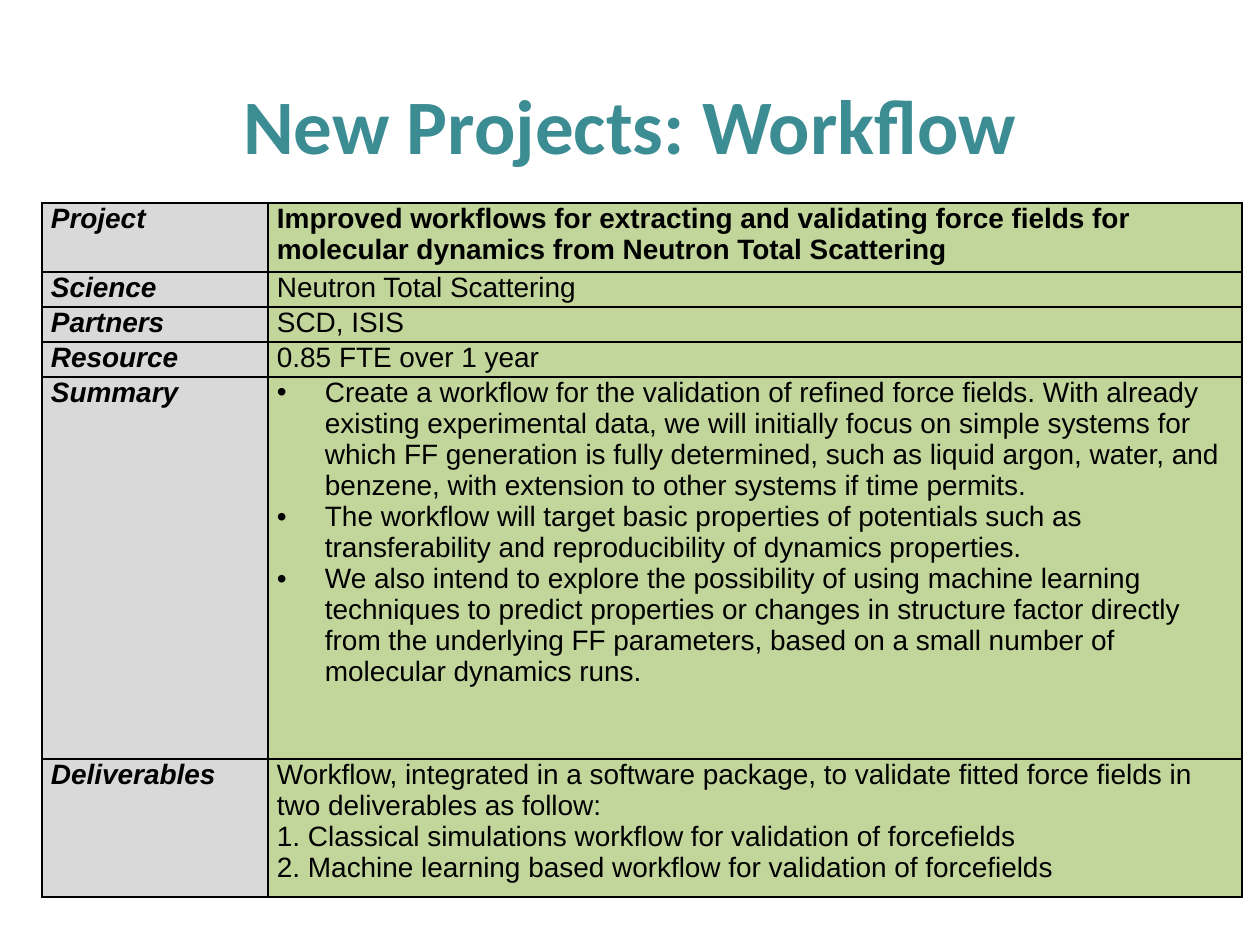
from dataclasses import dataclass

from lxml import etree
from pptx import Presentation
from pptx import util as u
from pptx.dml.color import RGBColor
from pptx.enum import text
from pptx.oxml import ns

PX_PER_INCH = 126
TEAL = RGBColor(0x3C, 0x8C, 0x93)
GREY = RGBColor(0xD9, 0xD9, 0xD9)
GREEN = RGBColor(0xC2, 0xD6, 0x9B)
BLACK = RGBColor(0, 0, 0)
CELL_MARGIN = 9
BULLET_INDENT = 48
COLUMN_WIDTHS = (226, 974)


@dataclass(frozen=True)
class Entry:
    label: str
    height: int
    lines: tuple[str, ...]
    bold: bool = False
    bulleted: bool = False


ENTRIES = (
    Entry("Project", 69, (
        "Improved workflows for extracting and validating force fields for "
        "molecular dynamics from Neutron Total Scattering",
    ), bold=True),
    Entry("Science", 35, ("Neutron Total Scattering",)),
    Entry("Partners", 35, ("SCD, ISIS",)),
    Entry("Resource", 35, ("0.85 FTE over 1 year",)),
    Entry("Summary", 382, (
        "Create a workflow for the validation of refined force fields. With already "
        "existing experimental data, we will initially focus on simple systems for "
        "which FF generation is fully determined, such as liquid argon, water, and "
        "benzene, with extension to other systems if time permits.",
        "The workflow will target basic properties of potentials such as "
        "transferability and reproducibility of dynamics properties.",
        "We also intend to explore the possibility of using machine learning "
        "techniques to predict properties or changes in structure factor directly "
        "from the underlying FF parameters, based on a small number of "
        "molecular dynamics runs.",
    ), bulleted=True),
    Entry("Deliverables", 138, (
        "Workflow, integrated in a software package, to validate fitted force fields in "
        "two deliverables as follow:",
        "1. Classical simulations workflow for validation of forcefields",
        "2. Machine learning based workflow for validation of forcefields",
    )),
)


def px(length: int) -> u.Emu:
    return u.Emu(round(length * u.Inches(1) / PX_PER_INCH))


def add_borders(cell) -> None:
    properties = cell._tc.get_or_add_tcPr()
    for position, side in enumerate(("lnL", "lnR", "lnT", "lnB")):
        line = etree.Element(ns.qn(f"a:{side}"), w=str(u.Pt(1)))
        fill = etree.SubElement(line, ns.qn("a:solidFill"))
        etree.SubElement(fill, ns.qn("a:srgbClr"), val=str(BLACK))
        properties.insert(position, line)


def add_bullet(paragraph) -> None:
    properties = paragraph._p.get_or_add_pPr()
    properties.set("marL", str(px(BULLET_INDENT)))
    properties.set("indent", str(-px(BULLET_INDENT)))
    etree.SubElement(properties, ns.qn("a:buFont"), typeface="Arial")
    etree.SubElement(properties, ns.qn("a:buChar"), char="•")


def fill_cell(cell, lines: tuple[str, ...], color: RGBColor, bold: bool,
              italic: bool = False, bulleted: bool = False) -> None:
    cell.fill.solid()
    cell.fill.fore_color.rgb = color
    add_borders(cell)
    cell.margin_left = cell.margin_right = px(CELL_MARGIN)
    cell.margin_top = cell.margin_bottom = 0
    cell.text_frame.text = "\n".join(lines)
    for paragraph in cell.text_frame.paragraphs:
        if bulleted:
            add_bullet(paragraph)
        font = paragraph.font
        font.name, font.size = "Arial", u.Pt(16)
        font.bold, font.italic = bold, italic
        font.color.rgb = BLACK


def add_heading(slide) -> None:
    heading = slide.shapes.title
    heading.left, heading.top = px(0), px(45)
    heading.width, heading.height = px(1260), px(158)
    heading.text_frame.text = "New Projects: Workflow"
    heading.text_frame.vertical_anchor = text.MSO_ANCHOR.MIDDLE
    paragraph = heading.text_frame.paragraphs[0]
    paragraph.alignment = text.PP_ALIGN.CENTER
    font = paragraph.font
    font.name, font.size, font.bold = "Calibri", u.Pt(44), True
    font.color.rgb = TEAL


def add_project_table(slide) -> None:
    project = slide.shapes.add_table(
        len(ENTRIES), len(COLUMN_WIDTHS), px(42), px(203),
        px(sum(COLUMN_WIDTHS)), px(sum(entry.height for entry in ENTRIES)),
    ).table
    project.first_row = project.horz_banding = False
    for column, width in zip(project.columns, COLUMN_WIDTHS):
        column.width = px(width)
    for row, entry in zip(project.rows, ENTRIES):
        row.height = px(entry.height)
        label, details = row.cells
        fill_cell(label, (entry.label,), GREY, bold=True, italic=True)
        fill_cell(details, entry.lines, GREEN, entry.bold, bulleted=entry.bulleted)


def main() -> None:
    deck = Presentation()
    deck.slide_width, deck.slide_height = px(1260), px(945)
    slide = deck.slides.add_slide(deck.slide_layouts.get_by_name("Title Only"))
    add_heading(slide)
    add_project_table(slide)
    deck.save("out.pptx")


if __name__ == "__main__":
    main()
